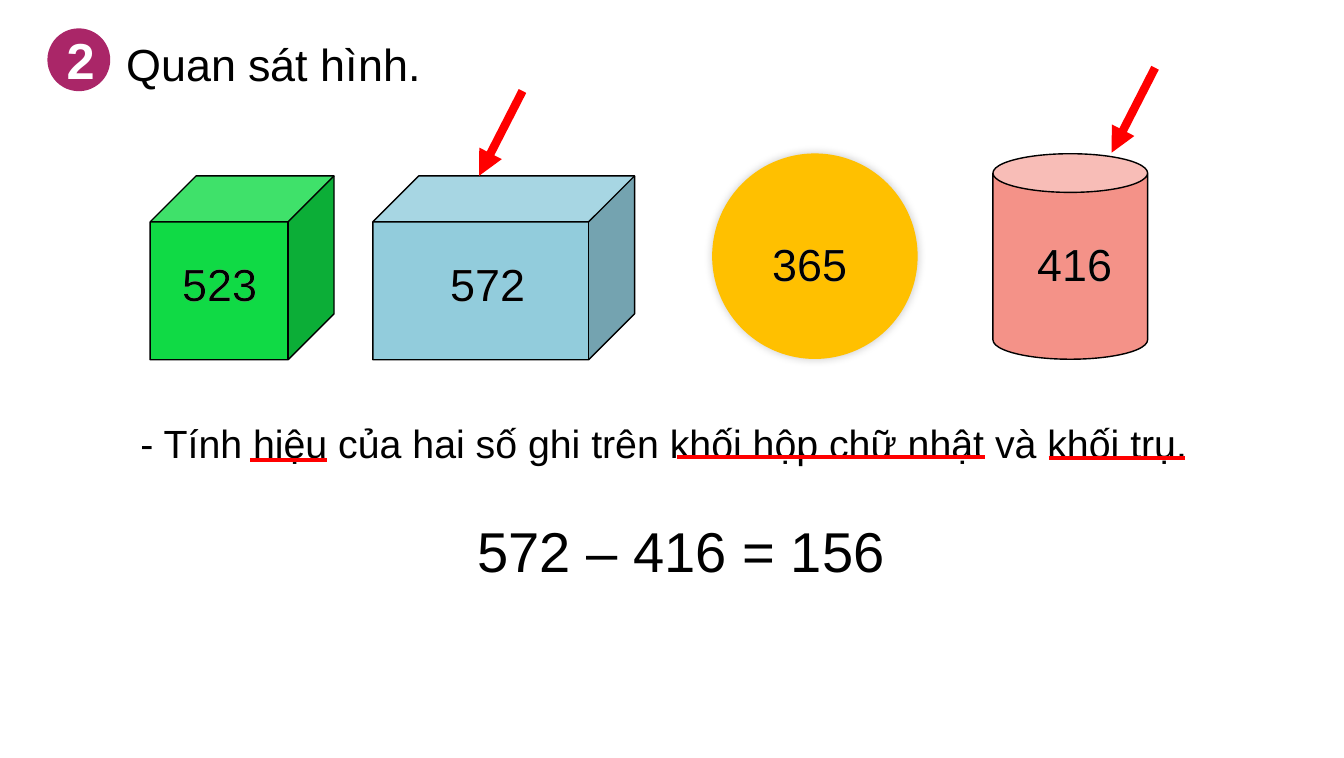
from lxml import etree
from pptx import Presentation
from pptx.dml.color import RGBColor
from pptx.enum import shapes, text
from pptx.oxml import parse_xml
from pptx.oxml.ns import nsdecls, qn
from pptx.util import Pt

FONT = "Arial"
BLACK, WHITE, RED = "000000", "FFFFFF", "FF0000"
SHAPE = shapes.MSO_SHAPE


def paint(target, color):
    target.solid()
    target.fore_color.rgb = RGBColor.from_string(color)


def write(frame, words, size, color=BLACK, bold=False):
    paragraph = frame.paragraphs[0]
    paragraph.text = words
    paragraph.font.name = FONT
    paragraph.font.size = Pt(size)
    paragraph.font.bold = bold
    paragraph.font.color.rgb = RGBColor.from_string(color)
    return paragraph


def add_words(slide, words, box, size, color=BLACK):
    frame = slide.shapes.add_textbox(*map(Pt, box)).text_frame
    frame.word_wrap = True
    return write(frame, words, size, color)


def add_solid(slide, kind, box, color, outlined=False):
    solid = slide.shapes.add_shape(kind, *map(Pt, box))
    paint(solid.fill, color)
    if outlined:
        paint(solid.line.fill, BLACK)
        solid.line.width = Pt(1)
    else:
        solid.line.fill.background()
    solid.shadow.inherit = False
    return solid


def add_glow(solid, blur, opacity):
    effects = solid._element.spPr.find(qn("a:effectLst"))
    effects.append(parse_xml(
        f'<a:outerShdw {nsdecls("a")} blurRad="{Pt(blur)}" dist="0" dir="18900000" '
        f'algn="ctr" rotWithShape="0"><a:srgbClr val="{BLACK}">'
        f'<a:alpha val="{opacity * 1000}"/></a:srgbClr></a:outerShdw>'))


def add_red_line(slide, start, end, width, arrow=False):
    stroke = slide.shapes.add_connector(
        shapes.MSO_CONNECTOR.STRAIGHT, *map(Pt, (*start, *end)))
    paint(stroke.line.fill, RED)
    stroke.line.width = Pt(width)
    if arrow:
        etree.SubElement(stroke.line._get_or_add_ln(), qn("a:tailEnd"), type="triangle")
    etree.SubElement(stroke._element.spPr, qn("a:effectLst"))


def add_number(slide, number, left, top):
    for color, width in ((WHITE, 75), (BLACK, 68.4)):
        add_words(slide, number, (left, top, width, 46), 32, color)


def main():
    deck = Presentation()
    deck.slide_width, deck.slide_height = Pt(957.6), Pt(540)
    slide = deck.slides.add_slide(deck.slide_layouts[6])

    add_words(slide, "Quan sát hình.", (82.8, 22.3, 504.7, 46), 32)
    badge = add_solid(slide, SHAPE.OVAL, (33.8, 20.2, 44.8, 44.8), "AA2668")
    badge.text_frame.vertical_anchor = text.MSO_ANCHOR.MIDDLE
    write(badge.text_frame, "2", 36, WHITE, True).alignment = text.PP_ALIGN.CENTER

    add_solid(slide, SHAPE.CUBE, (107, 125.3, 131, 131), "10DA45", True)
    add_solid(slide, SHAPE.CUBE, (265.7, 125.3, 186.5, 131), "92CCDC", True)
    add_solid(slide, SHAPE.CAN, (707.5, 109.5, 110.2, 146.4), "F49288", True)
    circle = add_solid(slide, SHAPE.OVAL, (507.4, 109.3, 146.4, 146.4), "FFC000")
    add_glow(circle, 6, 20)

    for number, left, top in (("523", 123, 179.3), ("572", 313.9, 179.3),
                              ("365", 543.3, 165), ("416", 732, 165)):
        add_number(slide, number, left, top)

    task = add_words(
        slide, "- Tính hiệu của hai số ghi trên khối hộp chữ nhật và khối trụ.",
        (93, 278.6, 832.3, 58.3), 28)
    task.line_spacing = 1.5
    for left, right, y in ((178, 233, 327.6), (482.4, 701.5, 325.4), (747.2, 844.4, 326.2)):
        add_red_line(slide, (left, y), (right, y), 3)

    add_words(slide, "572 – 416 = 156", (333.1, 364.3, 374.4, 55.7), 40)

    for x, y in ((341.3, 125.3), (792, 108.8)):
        add_red_line(slide, (x + 31, y - 60.5), (x, y), 6, arrow=True)

    deck.save("out.pptx")


if __name__ == "__main__":
    main()
